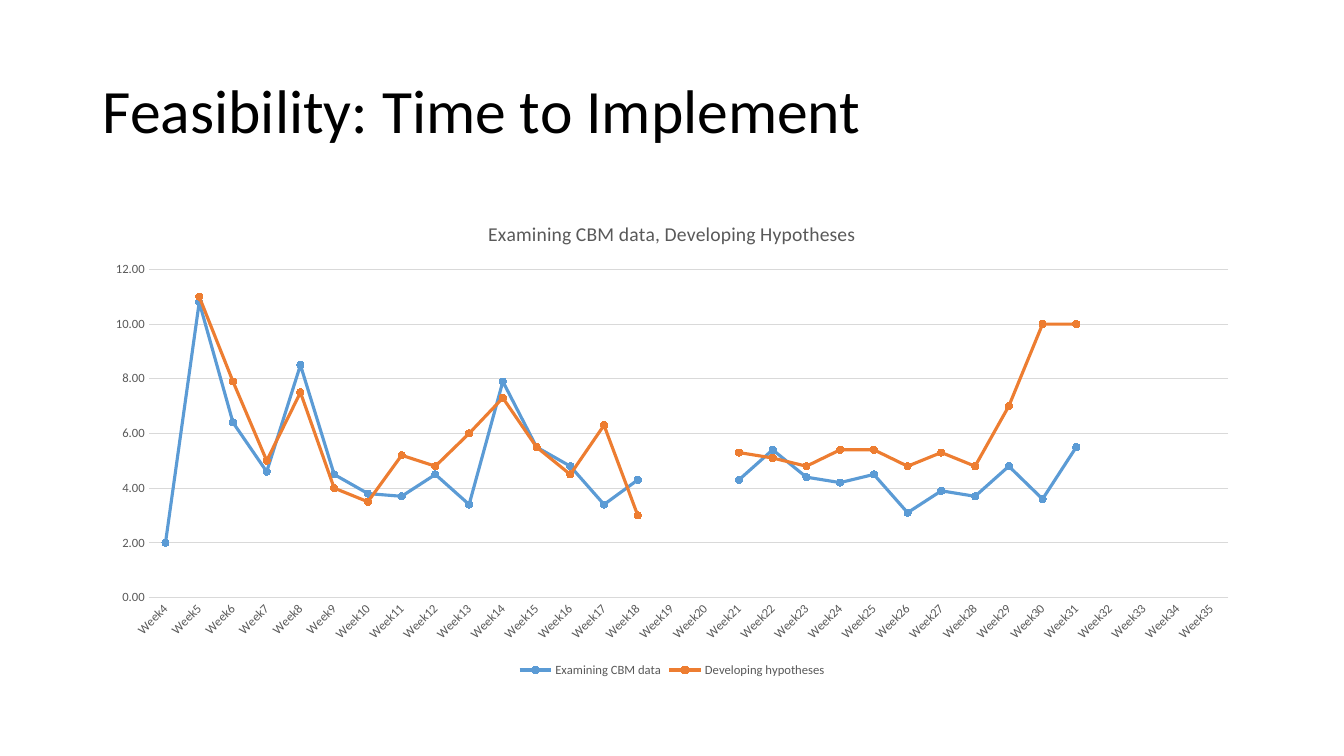
from pptx import Presentation
from pptx.chart.data import CategoryChartData
from pptx.dml.color import RGBColor
from pptx.enum.chart import (XL_CHART_TYPE, XL_LEGEND_POSITION as LEGEND_POS,
                             XL_MARKER_STYLE as MARKER, XL_TICK_MARK as TICK)
from pptx.enum.text import MSO_ANCHOR, PP_ALIGN
from pptx.util import Inches, Pt

TITLE = "Feasibility: Time to Implement"
CHART_TITLE = "Examining CBM data, Developing Hypotheses"
FIRST_WEEK, LAST_WEEK = 4, 35
BREAK = [None] * 2   # weeks 19-20
UNUSED = [None] * 4  # weeks 32-35

BLACK = RGBColor(0x00, 0x00, 0x00)
GRAY = RGBColor(0x59, 0x59, 0x59)
GRID = RGBColor(0xD9, 0xD9, 0xD9)
BLUE = RGBColor(0x5B, 0x9B, 0xD5)
ORANGE = RGBColor(0xED, 0x7D, 0x31)
FONT = "Calibri"

SERIES = [
    ("Examining CBM data", BLUE,
     [2, 10.8, 6.4, 4.6, 8.5, 4.5, 3.8, 3.7, 4.5, 3.4, 7.9, 5.5, 4.8, 3.4, 4.3]
     + BREAK + [4.3, 5.4, 4.4, 4.2, 4.5, 3.1, 3.9, 3.7, 4.8, 3.6, 5.5] + UNUSED),
    ("Developing hypotheses", ORANGE,
     [None, 11, 7.9, 5, 7.5, 4, 3.5, 5.2, 4.8, 6, 7.3, 5.5, 4.5, 6.3, 3]
     + BREAK + [5.3, 5.1, 4.8, 5.4, 5.4, 4.8, 5.3, 4.8, 7, 10, 10] + UNUSED),
]

WIDTH, HEIGHT = 13.33, 7.5
MARGIN = 0.92
CONTENT_W = WIDTH - 2 * MARGIN
TITLE_TOP, TITLE_H = 0.4, 1.45
CHART_TOP, CHART_H = 2, 4.76


def style_font(font, size, color=GRAY):
    font.name, font.size, font.bold = FONT, Pt(size), False
    font.color.rgb = color


def style_line(line, color, width):
    line.color.rgb = color
    line.width = Pt(width)


def write(tf, text, size, color=GRAY, align=None, spacing=None):
    tf.text = text
    p = tf.paragraphs[0]
    p.alignment, p.line_spacing = align, spacing
    style_font(p.runs[0].font, size, color)


def add_title(s):
    sp = s.shapes.title
    sp.left, sp.top = Inches(MARGIN), Inches(TITLE_TOP)
    sp.width, sp.height = Inches(CONTENT_W), Inches(TITLE_H)
    sp.text_frame.vertical_anchor = MSO_ANCHOR.MIDDLE
    write(sp.text_frame, TITLE, 44, BLACK, PP_ALIGN.LEFT, 0.9)


def add_time_chart(s):
    data = CategoryChartData(number_format="0.00")
    data.categories = [f"Week{n}" for n in range(FIRST_WEEK, LAST_WEEK + 1)]
    for name, _, values in SERIES:
        data.add_series(name, values)
    chart = s.shapes.add_chart(
        XL_CHART_TYPE.LINE_MARKERS, Inches(MARGIN), Inches(CHART_TOP),
        Inches(CONTENT_W), Inches(CHART_H), data).chart
    style_font(chart.font, 10, BLACK)
    chart.has_title = True
    write(chart.chart_title.text_frame, CHART_TITLE, 14)
    chart.chart_title.include_in_layout = False
    chart.has_legend = True
    chart.legend.position = LEGEND_POS.BOTTOM
    chart.legend.include_in_layout = False
    style_font(chart.legend.font, 9)
    style_axes(chart.category_axis, chart.value_axis)
    chart.plots[0].vary_by_categories = False
    for series, (_, color, _) in zip(chart.plots[0].series, SERIES):
        style_series(series, color)


def style_axes(weeks, values):
    for axis in (weeks, values):
        axis.major_tick_mark = axis.minor_tick_mark = TICK.NONE
        style_font(axis.tick_labels.font, 9)
    style_line(weeks.format.line, GRID, 0.75)
    values.format.line.fill.background()
    values.minimum_scale, values.maximum_scale, values.major_unit = 0, 12, 2
    values.tick_labels.number_format = "0.00"
    values.tick_labels.number_format_is_linked = False
    values.has_major_gridlines = True
    style_line(values.major_gridlines.format.line, GRID, 0.75)


def style_series(series, color):
    series.smooth = False
    style_line(series.format.line, color, 2.25)
    marker = series.marker
    marker.style, marker.size = MARKER.CIRCLE, 5
    marker.format.fill.solid()
    marker.format.fill.fore_color.rgb = color
    style_line(marker.format.line, color, 0.75)


def main():
    prs = Presentation()
    prs.slide_width, prs.slide_height = Inches(WIDTH), Inches(HEIGHT)
    s = prs.slides.add_slide(prs.slide_layouts.get_by_name("Title Only"))
    add_title(s)
    add_time_chart(s)
    prs.save("out.pptx")


if __name__ == "__main__":
    main()
